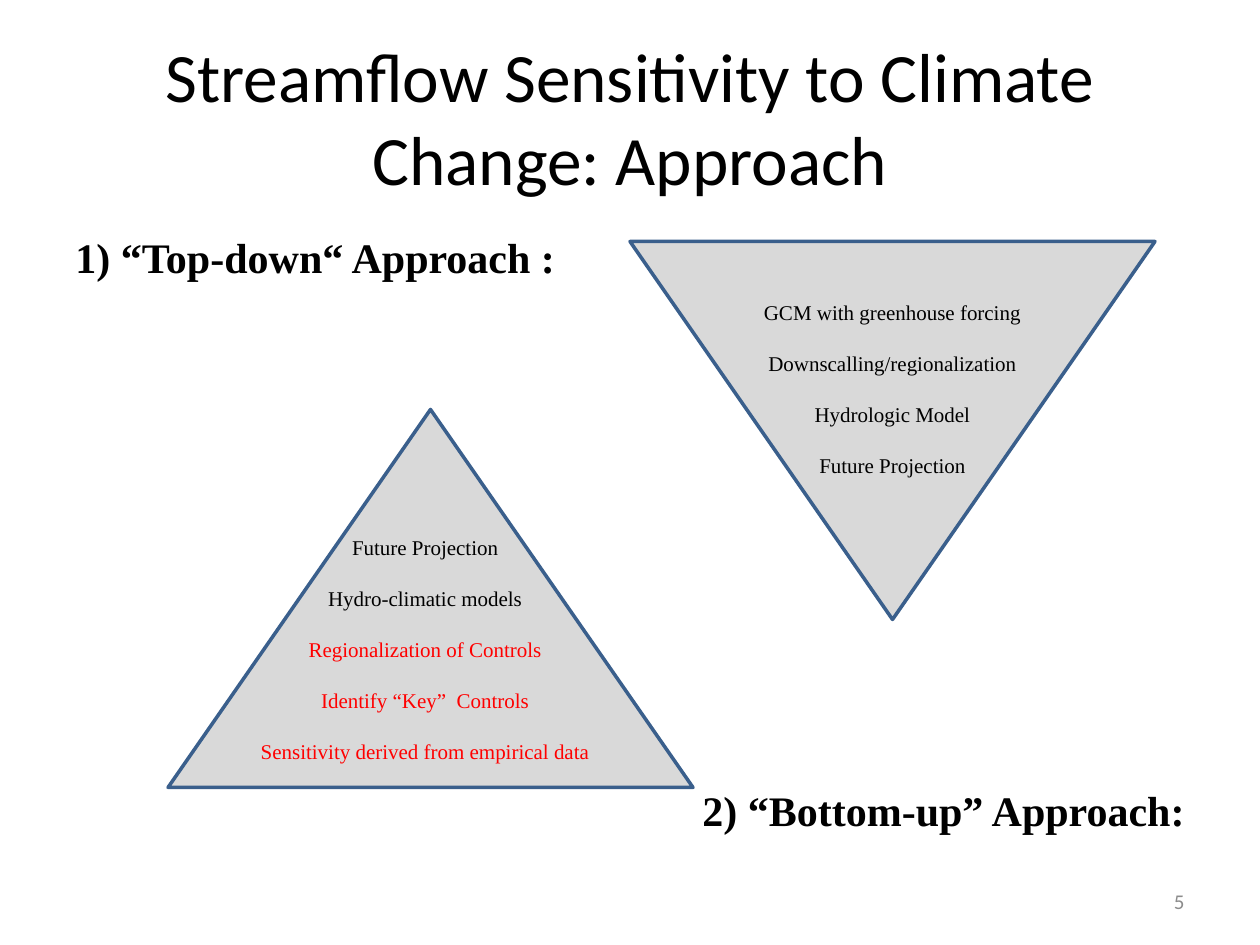
from pptx import Presentation, util as u
from pptx.dml.color import RGBColor
from pptx.enum import shapes, text

COLUMNS, ROWS = 120, 90
SERIF, SANS = "Times New Roman", "Calibri"
BLACK, RED, GREY = "000000", "FF0000", "8C8C8C"
ALIGN, ANCHOR = text.PP_ALIGN, text.MSO_ANCHOR

presentation = Presentation()
presentation.slide_width, presentation.slide_height = u.Inches(10), u.Inches(7.5)


def color(value):
    return RGBColor.from_string(value)


def place(box):
    column, row, width, height = box
    cell_width = presentation.slide_width / COLUMNS
    cell_height = presentation.slide_height / ROWS
    return [round(length) for length in (
        column * cell_width, row * cell_height, width * cell_width, height * cell_height)]


def apply(target, formats):
    for name, value in formats.items():
        setattr(target, name, value)


def add_text(slide, box, lines, font, frame_format=None):
    frame = slide.shapes.add_textbox(*place(box)).text_frame
    apply(frame, {"word_wrap": True, **(frame_format or {})})
    for index, (words, shade, paragraph_format) in enumerate(lines):
        paragraph = frame.paragraphs[0] if index == 0 else frame.add_paragraph()
        apply(paragraph, paragraph_format)
        run = paragraph.add_run()
        run.text = words
        apply(run.font, font)
        run.font.color.rgb = color(shade)


def add_title(slide, box, words):
    add_text(slide, box, [(words, BLACK, {"alignment": ALIGN.CENTER})],
             {"name": SANS, "size": u.Pt(39.6)}, {"vertical_anchor": ANCHOR.MIDDLE})


def add_headings(slide, box, first, second):
    lines = [(first, BLACK, {"alignment": ALIGN.LEFT}),
             (second, BLACK, {"alignment": ALIGN.RIGHT, "space_before": u.Pt(287)})]
    add_text(slide, box, lines, {"name": SERIF, "size": u.Pt(24), "bold": True},
             {"margin_top": u.Inches(0.09)})


def add_triangle(slide, box, rotation, text_offset, top_margin, steps):
    shape = slide.shapes.add_shape(shapes.MSO_SHAPE.ISOSCELES_TRIANGLE, *place(box))
    shape.rotation = rotation
    shape.shadow.inherit = False
    shape.fill.solid()
    shape.fill.fore_color.rgb = color("D9D9D9")
    shape.line.color.rgb = color("3A5F8C")
    shape.line.width = u.Pt(2)
    column, row, width, height = text_offset
    step_format = {"alignment": ALIGN.CENTER, "space_after": u.Pt(14.8)}
    add_text(slide, (box[0] + column, box[1] + row, width, height),
             [(words, shade, step_format) for words, shade in steps],
             {"name": SERIF, "size": u.Pt(12)}, {"margin_top": u.Inches(top_margin)})


def add_page_number(slide, box, number):
    add_text(slide, box, [(number, GREY, {"alignment": ALIGN.RIGHT})],
             {"name": SANS, "size": u.Pt(12)}, {"vertical_anchor": ANCHOR.MIDDLE})


def main():
    slide = presentation.slides.add_slide(presentation.slide_layouts[6])
    add_title(slide, (6, 3.6, 108, 15), "Streamflow Sensitivity to Climate Change: Approach")
    add_headings(slide, (6, 21, 108, 59.4),
                 "1) “Top-down“ Approach :", "2) “Bottom-up” Approach:")
    add_triangle(slide, (60, 23, 50, 36), 180, (11, 0, 28, 39), 0.46, [
        ("GCM with greenhouse forcing", BLACK),
        ("Downscalling/regionalization", BLACK),
        ("Hydrologic Model", BLACK),
        ("Future Projection", BLACK),
    ])
    add_triangle(slide, (16, 39, 50, 36), 0, (7, 4, 35, 30), 0.66, [
        ("Future Projection", BLACK),
        ("Hydro-climatic models", BLACK),
        ("Regionalization of Controls", RED),
        ("Identify “Key”  Controls", RED),
        ("Sensitivity derived from empirical data", RED),
    ])
    add_page_number(slide, (86, 83.4, 28, 4.8), "5")
    presentation.save("out.pptx")


if __name__ == "__main__":
    main()
